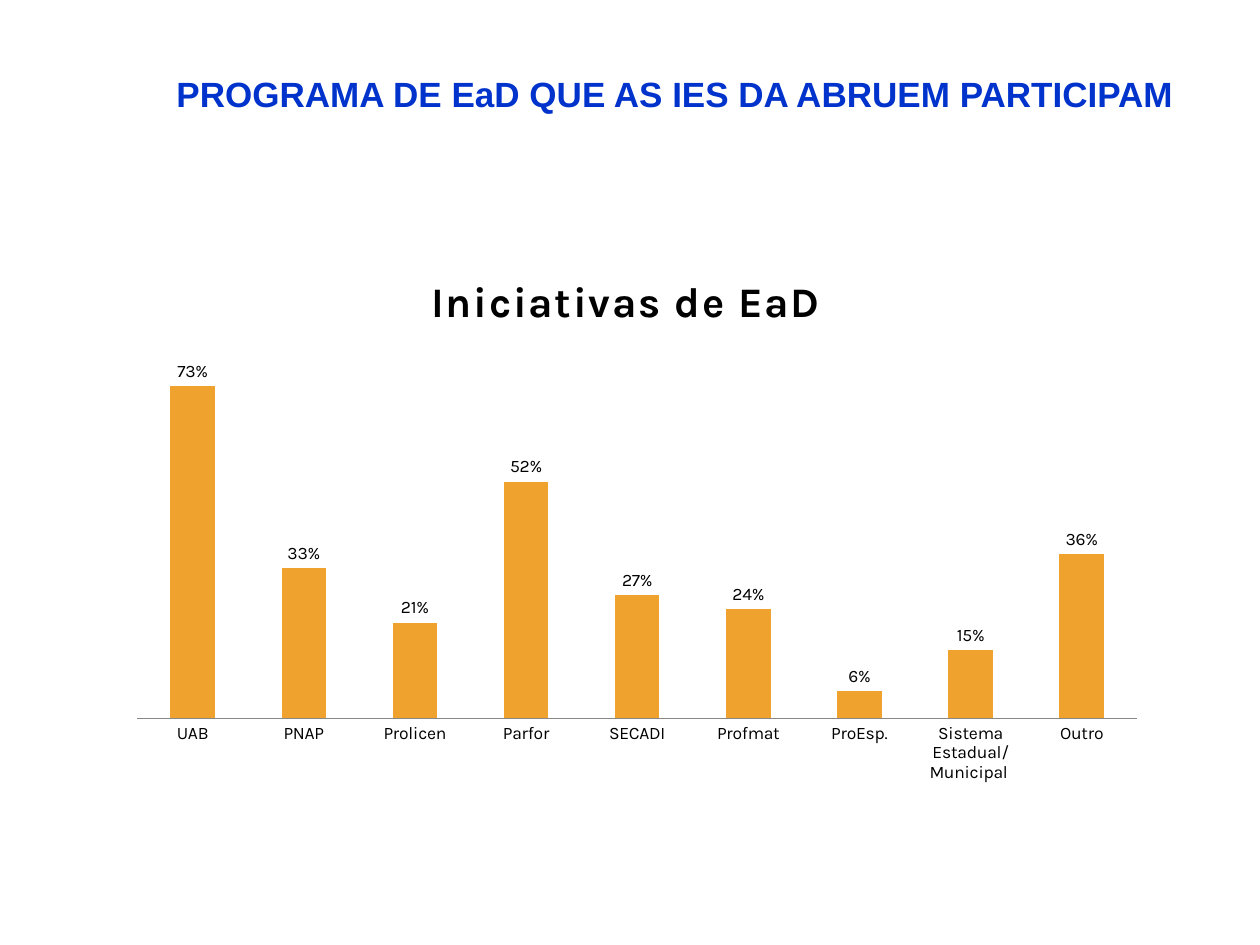
"""Build a slide with a column chart of distance-learning initiatives."""
import pptx
import pptx.chart.data
import pptx.dml.color
import pptx.enum.chart
import pptx.enum.text
import pptx.oxml
import pptx.oxml.ns
import pptx.util

EMU_PER_PX = 914400 // 126
BLACK = pptx.dml.color.RGBColor(0x00, 0x00, 0x00)
BLUE = pptx.dml.color.RGBColor(0x00, 0x33, 0xCC)
ORANGE = pptx.dml.color.RGBColor(0xF0, 0xA2, 0x2E)
GRAY = pptx.dml.color.RGBColor(0x88, 0x88, 0x88)

INITIATIVES = {
    "UAB": 0.73,
    "PNAP": 0.33,
    "Prolicen": 0.21,
    "Parfor": 0.52,
    "SECADI": 0.27,
    "Profmat": 0.24,
    "ProEsp.": 0.06,
    "Sistema Estadual/Municipal ": 0.15,
    "Outro": 0.36,
}


def px(length):
    return pptx.util.Emu(length * EMU_PER_PX)


def set_layout(parent, index, **settings):
    for old_layout in parent.findall(pptx.oxml.ns.qn("c:layout")):
        parent.remove(old_layout)
    values = "".join(f'<c:{name} val="{value}"/>' for name, value in settings.items())
    parent.insert(index, pptx.oxml.parse_xml(
        f'<c:layout {pptx.oxml.ns.nsdecls("c")}>'
        f"<c:manualLayout>{values}</c:manualLayout></c:layout>"))


class SlideBuilder:
    heading_font = "Arial"
    chart_font = "Karla"

    def __init__(self, slide):
        self.slide = slide

    def style_font(self, font, name, size, color, bold=False):
        font.name = name
        font.size = pptx.util.Pt(size)
        font.color.rgb = color
        font.bold = bold

    def add_heading(self, text, left, top, width, height):
        shape = self.slide.shapes.add_textbox(px(left), px(top), px(width), px(height))
        frame = shape.text_frame
        frame.word_wrap = False
        frame.auto_size = pptx.enum.text.MSO_AUTO_SIZE.SHAPE_TO_FIT_TEXT
        run = frame.paragraphs[0].add_run()
        run.text = text
        self.style_font(run.font, self.heading_font, 20, BLUE, bold=True)

    def add_column_chart(self, title, values, left, top, width, height):
        data = pptx.chart.data.CategoryChartData(number_format="0%")
        data.categories = list(values)
        data.add_series("Series 1", list(values.values()))
        chart = self.slide.shapes.add_chart(
            pptx.enum.chart.XL_CHART_TYPE.COLUMN_CLUSTERED,
            px(left), px(top), px(width), px(height), data).chart
        self.style_font(chart.font, self.chart_font, 10, BLACK)
        chart.has_legend = False
        self.style_title(chart, title)
        self.style_axes(chart)
        self.style_columns(chart.plots[0])
        plot_area = chart.plots[0]._element.getparent()
        set_layout(plot_area, 0, layoutTarget="inner", xMode="edge", yMode="edge",
                   x=0.05, y=0.181, w=0.942, h=0.55)

    def style_title(self, chart, text):
        chart.has_title = True
        title = chart.chart_title
        title.include_in_layout = False
        run = title.text_frame.paragraphs[0].add_run()
        run.text = text
        self.style_font(run.font, self.chart_font, 24, BLACK, bold=True)
        run.font._element.set("spc", "100")
        set_layout(title._element, 1, xMode="edge", yMode="edge", x=0.32, y=0.05)

    def style_axes(self, chart):
        no_ticks = pptx.enum.chart.XL_TICK_MARK.NONE
        category_axis = chart.category_axis
        category_axis.major_tick_mark = no_ticks
        category_axis.format.line.color.rgb = GRAY
        category_axis.format.line.width = pptx.util.Pt(0.75)
        value_axis = chart.value_axis
        value_axis.minimum_scale = 0
        value_axis.maximum_scale = 0.8
        value_axis.has_major_gridlines = False
        value_axis.visible = False

    def style_columns(self, plot):
        plot.gap_width = 150
        plot.overlap = -25
        plot.vary_by_categories = False
        fill = plot.series[0].format.fill
        fill.solid()
        fill.fore_color.rgb = ORANGE
        plot.has_data_labels = True
        labels = plot.data_labels
        labels.show_value = True
        labels.number_format = "0%"
        labels.number_format_is_linked = False
        labels.position = pptx.enum.chart.XL_LABEL_POSITION.OUTSIDE_END
        self.style_font(labels.font, self.chart_font, 10, BLACK)


def main():
    presentation = pptx.Presentation()
    presentation.slide_width = px(1260)
    presentation.slide_height = px(945)
    builder = SlideBuilder(presentation.slides.add_slide(presentation.slide_layouts[6]))
    builder.add_column_chart("Iniciativas de EaD ", INITIATIVES, 84, 234, 1062, 663)
    builder.add_heading("PROGRAMA DE EaD QUE AS IES DA ABRUEM PARTICIPAM", 164, 66, 1041, 55)
    presentation.save("out.pptx")


if __name__ == "__main__":
    main()
